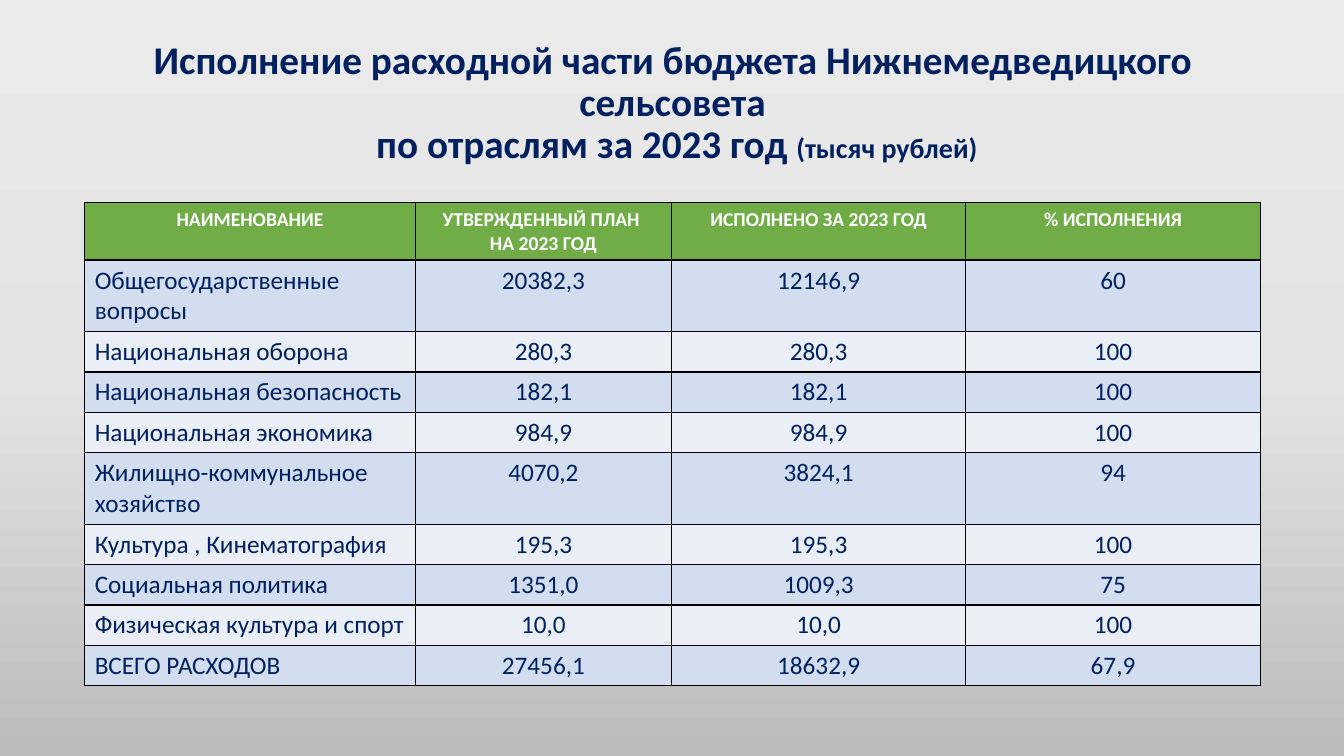
from copy import deepcopy

from pptx import Presentation
from pptx.dml.color import RGBColor
from pptx.enum.text import MSO_ANCHOR, PP_ALIGN
from pptx.oxml import parse_xml
from pptx.oxml.ns import nsdecls, qn
from pptx.util import Inches, Pt

LEFT, CENTER = PP_ALIGN.LEFT, PP_ALIGN.CENTER
MIDDLE = MSO_ANCHOR.MIDDLE

THEME = {
    "font": "Calibri",
    "navy": "002060", "white": "FFFFFF", "line": "000000",
    "head": "70AD47", "bands": ["D2DEEF", "EAEFF7"],
    "back": [(0, "EBEAEA"), (0.5, "E4E3E3"), (1, "BDBCBC")],
    "title": 28, "unit": 20, "label": 14, "body": 18,
}

ROWS = [
    ("НАИМЕНОВАНИЕ", "УТВЕРЖДЕННЫЙ ПЛАН \nНА 2023 ГОД",
     "ИСПОЛНЕНО ЗА 2023 ГОД", "% ИСПОЛНЕНИЯ"),
    ("Общегосударственные вопросы", "20382,3", "12146,9", "60"),
    ("Национальная оборона", "280,3", "280,3", "100"),
    ("Национальная безопасность", "182,1", "182,1", "100"),
    ("Национальная экономика", "984,9", "984,9", "100"),
    ("Жилищно-коммунальное хозяйство", "4070,2", "3824,1", "94"),
    ("Культура , Кинематография", "195,3", "195,3", "100"),
    ("Социальная политика", "1351,0", "1009,3", "75"),
    ("Физическая культура и спорт", "10,0", "10,0", "100"),
    ("ВСЕГО РАСХОДОВ", "27456,1", "18632,9", "67,9"),
]
WIDTHS = [3.28, 2.54, 2.92, 2.92]
HEAD, TALL, LOW = 0.57, 0.71, 0.4
WRAPPED = (1, 5)


def style(run, size, color, bold):
    font = run.font
    font.name, font.size, font.bold = THEME["font"], Pt(size), bold
    font.color.rgb = RGBColor.from_string(color)


def border(cell):
    props = cell._tc.get_or_add_tcPr()
    for side in "LRTB":
        props.append(parse_xml(
            f'<a:ln{side} {nsdecls("a")} w="{Pt(1)}"><a:solidFill>'
            f'<a:srgbClr val="{THEME["line"]}"/></a:solidFill></a:ln{side}>'))


deck = Presentation()
deck.slide_width, deck.slide_height = Inches(13.33), Inches(7.5)
slide = deck.slides.add_slide(deck.slide_layouts[6])

# Background: three grey stops from top to bottom
back = slide.background.fill
back.gradient()
back.gradient_angle = 270
stops = slide.element.find(".//" + qn("a:gsLst"))
stops.append(deepcopy(stops[0]))
for stop, (place, color) in zip(back.gradient_stops, THEME["back"]):
    stop.position = place
    stop.color.rgb = RGBColor.from_string(color)

# Title with the unit in smaller type
box = slide.shapes.add_textbox(Inches(0.92), Inches(0.4), Inches(11.5), Inches(1.26))
frame = box.text_frame
frame.word_wrap = True
frame.vertical_anchor = MIDDLE
frame.text = ("Исполнение расходной части бюджета Нижнемедведицкого сельсовета"
              "\v по отраслям за 2023 год ")
title = frame.paragraphs[0]
title.alignment, title.line_spacing = CENTER, 0.9
for run in title.runs:
    style(run, THEME["title"], THEME["navy"], True)
unit = title.add_run()
unit.text = "(тысяч рублей)"
style(unit, THEME["unit"], THEME["navy"], True)

# Table grid
highs = [HEAD] + [TALL if n in WRAPPED else LOW for n in range(1, len(ROWS))]
table = slide.shapes.add_table(
    len(ROWS), len(WIDTHS), Inches(0.84), Inches(2.01),
    Inches(sum(WIDTHS)), Inches(sum(highs))).table
for col, width in zip(table.columns, WIDTHS):
    col.width = Inches(width)

# Table cells: green header, then two bands in turn
for r, (row, high) in enumerate(zip(ROWS, highs)):
    table.rows[r].height = Inches(high)
    top = r == 0
    fill = THEME["head"] if top else THEME["bands"][(r - 1) % 2]
    size = THEME["label" if top else "body"]
    color = THEME["white" if top else "navy"]
    for c, text in enumerate(row):
        cell = table.cell(r, c)
        border(cell)
        cell.fill.solid()
        cell.fill.fore_color.rgb = RGBColor.from_string(fill)
        cell.text_frame.text = text
        for para in cell.text_frame.paragraphs:
            para.alignment = CENTER if top or c else LEFT
            for run in para.runs:
                style(run, size, color, top)

deck.save("out.pptx")
